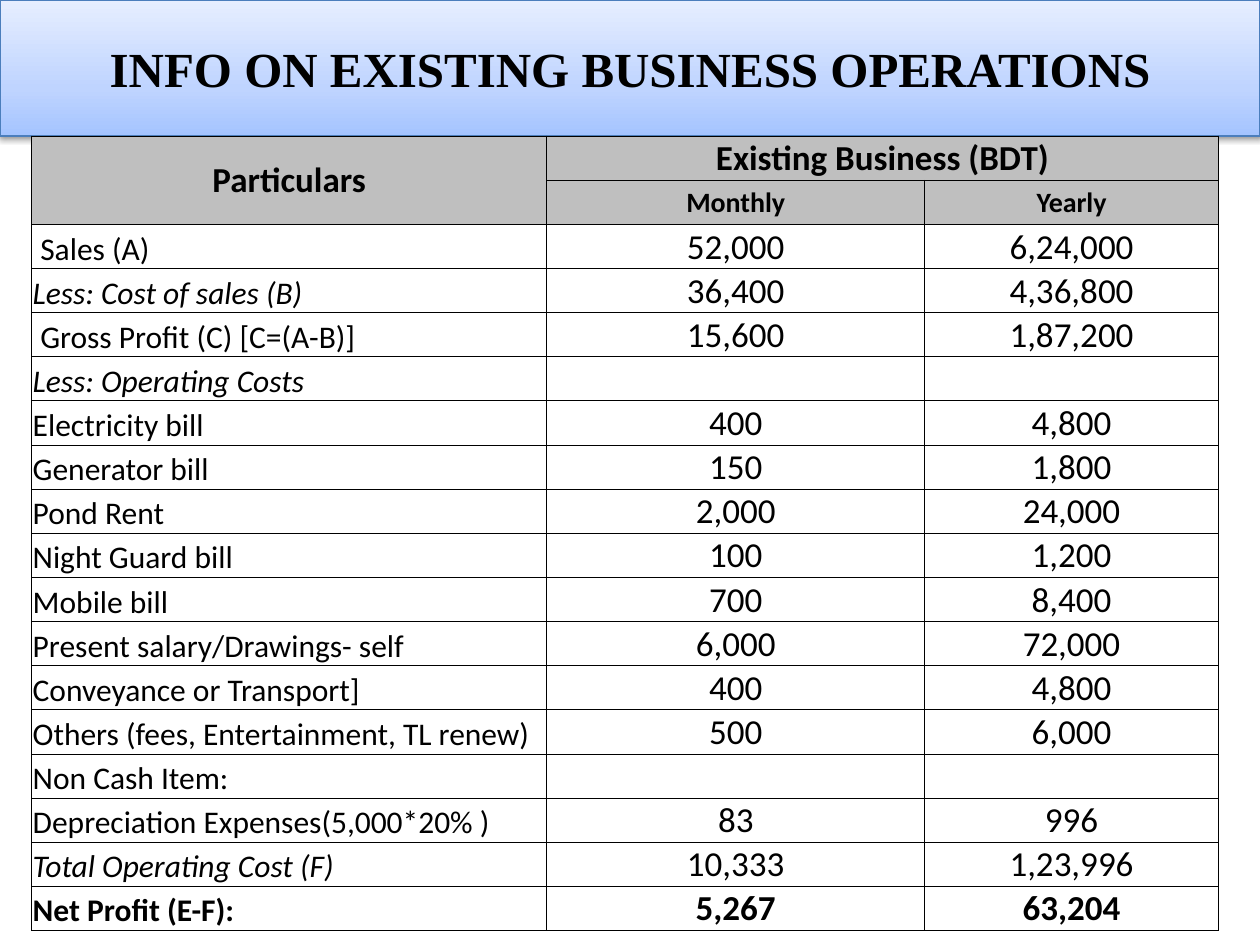
from pptx import Presentation
from pptx.dml.color import RGBColor
from pptx.enum.text import MSO_ANCHOR, MSO_AUTO_SIZE, PP_ALIGN
from pptx.oxml import parse_xml
from pptx.oxml.ns import nsdecls
from pptx.util import Inches, Pt

COLORS = {
    "text": "000000",
    "border": "000000",
    "shadow": "000000",
    "header": "BFBFBF",
    "body": "FFFFFF",
    "banner_line": "4B7EBC",
    "banner_bottom": "A4C4FF",
    "banner_middle": "BFD4FF",
    "banner_top": "E6EEFF",
}
BANNER_STOPS = [(0, "banner_bottom"), (35, "banner_middle"), (100, "banner_top")]

COLUMN_WIDTHS = [4.09, 3, 2.33]
TABLE_HEIGHT = 6.28
HEADER_ROWS = 2
INDENTED = {"Sales (A)", "Gross Profit (C) [C=(A-B)]"}
ITALIC = {"Less: Cost of sales (B)", "Less: Operating Costs", "Total Operating Cost (F)"}
ROWS = [
    ("Sales (A)", "52,000", "6,24,000"),
    ("Less: Cost of sales (B)", "36,400", "4,36,800"),
    ("Gross Profit (C) [C=(A-B)]", "15,600", "1,87,200"),
    ("Less: Operating Costs", "", ""),
    ("Electricity bill", "400", "4,800"),
    ("Generator bill", "150", "1,800"),
    ("Pond Rent", "2,000", "24,000"),
    ("Night Guard bill", "100", "1,200"),
    ("Mobile bill", "700", "8,400"),
    ("Present salary/Drawings- self", "6,000", "72,000"),
    ("Conveyance or Transport]", "400", "4,800"),
    ("Others (fees, Entertainment, TL renew)", "500", "6,000"),
    ("Non Cash Item:", "", ""),
    ("Depreciation Expenses(5,000*20% )", "83", "996"),
    ("Total Operating Cost (F)", "10,333", "1,23,996"),
    ("Net Profit (E-F):", "5,267", "63,204"),
]


def apply(target, values):
    for name, value in values.items():
        setattr(target, name, value)


def write(frame, text, alignment, **font_values):
    paragraph = frame.paragraphs[0]
    paragraph.alignment = alignment
    if text:
        run = paragraph.add_run()
        run.text = text
        apply(run.font, font_values)
        run.font.color.rgb = RGBColor.from_string(COLORS["text"])


def add_banner(slide, text):
    banner = slide.shapes.title
    apply(banner, {"left": 0, "top": 0, "width": Inches(10), "height": Inches(1.08)})
    stops = "".join(
        f'<a:gs pos="{position * 1000}"><a:srgbClr val="{COLORS[color]}"/></a:gs>'
        for position, color in BANNER_STOPS
    )
    properties = banner.element.spPr
    properties.append(parse_xml(
        f'<a:gradFill {nsdecls("a")} rotWithShape="1"><a:gsLst>{stops}</a:gsLst>'
        '<a:lin ang="16200000" scaled="0"/></a:gradFill>'
    ))
    banner.line.color.rgb = RGBColor.from_string(COLORS["banner_line"])
    banner.line.width = Pt(0.75)
    properties.append(parse_xml(
        f'<a:effectLst {nsdecls("a")}><a:outerShdw blurRad="{Pt(3.1)}" dist="{Pt(1.6)}" '
        f'dir="5400000" rotWithShape="0"><a:srgbClr val="{COLORS["shadow"]}">'
        '<a:alpha val="38000"/></a:srgbClr></a:outerShdw></a:effectLst>'
    ))
    apply(banner.text_frame, {
        "vertical_anchor": MSO_ANCHOR.MIDDLE,
        "word_wrap": True,
        "auto_size": MSO_AUTO_SIZE.NONE,
    })
    write(banner.text_frame, text, PP_ALIGN.CENTER,
          name="Times New Roman", size=Pt(28), bold=True)


def add_borders(cell):
    properties = cell._tc.get_or_add_tcPr()
    for position, side in enumerate(("lnL", "lnR", "lnT", "lnB")):
        properties.insert(position, parse_xml(
            f'<a:{side} {nsdecls("a")} w="{Pt(0.5)}"><a:solidFill>'
            f'<a:srgbClr val="{COLORS["border"]}"/></a:solidFill></a:{side}>'
        ))


def format_cell(cell, fill, anchor):
    apply(cell, {
        "margin_left": Inches(0.01),
        "margin_right": Inches(0.01),
        "margin_top": Inches(0.01),
        "margin_bottom": 0,
        "vertical_anchor": anchor,
    })
    if fill:
        cell.fill.solid()
        cell.fill.fore_color.rgb = RGBColor.from_string(COLORS[fill])
    else:
        cell.fill.background()
    add_borders(cell)


def fill_header(table):
    for row in range(HEADER_ROWS):
        for column in range(len(COLUMN_WIDTHS)):
            format_cell(table.cell(row, column), "header", MSO_ANCHOR.MIDDLE)
    table.cell(0, 0).merge(table.cell(1, 0))
    table.cell(0, 1).merge(table.cell(0, 2))
    headings = [(0, 0, "Particulars", 20), (0, 1, "Existing Business (BDT)", 20),
                (1, 1, "Monthly", 16), (1, 2, "Yearly", 16)]
    for row, column, text, size in headings:
        write(table.cell(row, column).text_frame, text, PP_ALIGN.CENTER,
              name="Calibri", size=Pt(size), bold=True)


def fill_body(table):
    for row, entries in enumerate(ROWS, HEADER_ROWS):
        is_total = entries == ROWS[-1]
        for column, text in enumerate(entries):
            is_label = column == 0
            cell = table.cell(row, column)
            format_cell(cell, None if is_total else "body", MSO_ANCHOR.BOTTOM)
            if text in INDENTED:
                cell.margin_left = Inches(0.07)
            write(cell.text_frame, text,
                  PP_ALIGN.LEFT if is_label else PP_ALIGN.CENTER,
                  name="Calibri", size=Pt(18 if is_label else 20),
                  bold=is_total, italic=text in ITALIC)


def add_operations_table(slide):
    row_count = HEADER_ROWS + len(ROWS)
    table = slide.shapes.add_table(
        row_count, len(COLUMN_WIDTHS), Inches(0.25), Inches(1.08),
        Inches(sum(COLUMN_WIDTHS)), Inches(TABLE_HEIGHT)
    ).table
    apply(table, {"first_row": False, "horz_banding": False})
    for column, width in zip(table.columns, COLUMN_WIDTHS):
        column.width = Inches(width)
    for row in table.rows:
        row.height = Inches(TABLE_HEIGHT / row_count)
    fill_header(table)
    fill_body(table)


def main():
    presentation = Presentation()
    apply(presentation, {"slide_width": Inches(10), "slide_height": Inches(7.5)})
    slide = presentation.slides.add_slide(presentation.slide_layouts[5])
    add_banner(slide, "INFO ON EXISTING BUSINESS OPERATIONS")
    add_operations_table(slide)
    presentation.save("out.pptx")


if __name__ == "__main__":
    main()
